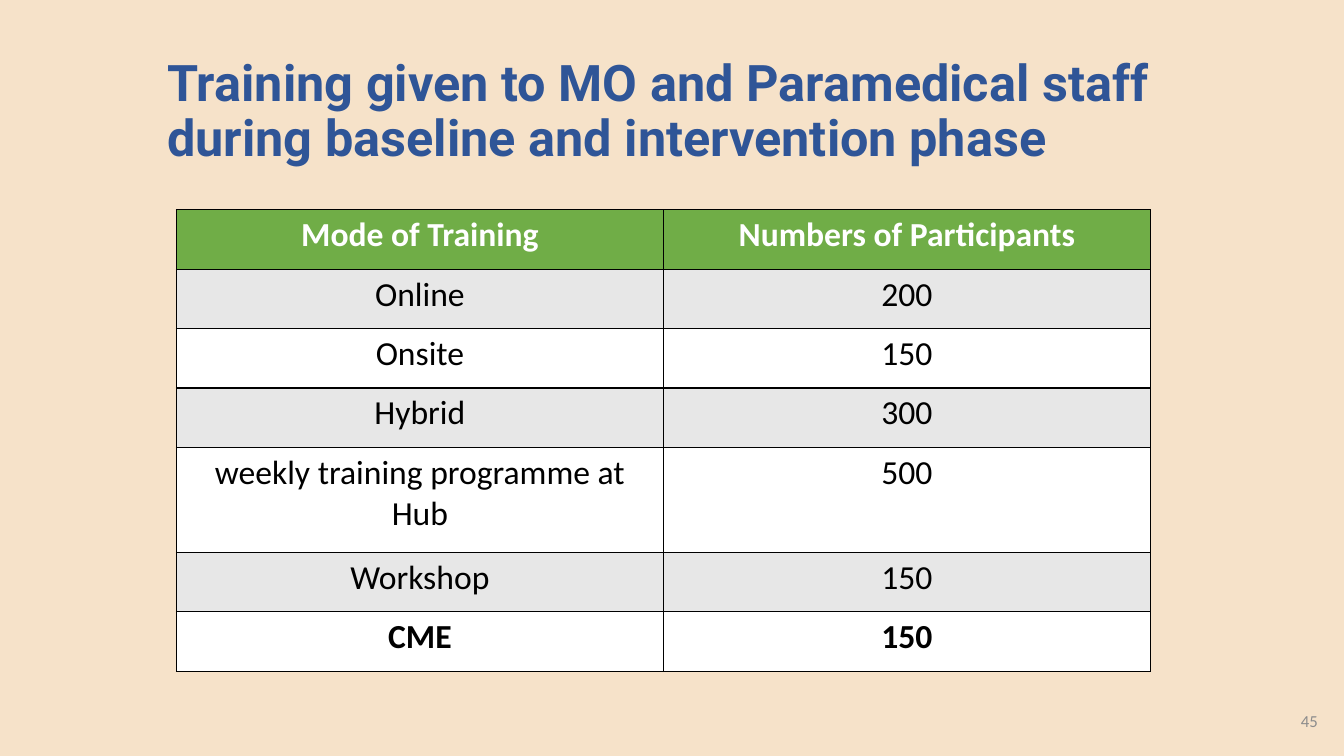
import pptx
import pptx.dml.color
import pptx.enum.text
import pptx.oxml
import pptx.oxml.ns
import pptx.util
from pptx.util import Inches

COLORS = {
    "background": "F6E2C9",
    "title": "2F5597",
    "header": "70AD47",
    "band": "E7E7E7",
    "white": "FFFFFF",
    "black": "000000",
    "page_number": "8C8C8C",
}
TRAININGS = [
    ("Mode of Training", "Numbers of Participants"),
    ("Online", "200"),
    ("Onsite", "150"),
    ("Hybrid", "300"),
    ("weekly training programme at Hub", "500"),
    ("Workshop", "150"),
    ("CME", "150"),
]
ROW_HEIGHT = 0.59
WRAPPED_ROW, WRAPPED_ROW_HEIGHT = 4, 1.04
COLUMN_WIDTH = 4.83

ALIGN = pptx.enum.text.PP_ALIGN
ANCHOR = pptx.enum.text.MSO_ANCHOR


def rgb(name):
    return pptx.dml.color.RGBColor.from_string(COLORS[name])


def write(frame, text, size, color, align, font="Calibri", bold=False):
    """Put one formatted run in the first paragraph of a text frame."""
    paragraph = frame.paragraphs[0]
    paragraph.alignment = align
    run = paragraph.add_run()
    run.text = text
    run.font.name = font
    run.font.size = pptx.util.Pt(size)
    run.font.bold = bold
    run.font.color.rgb = rgb(color)
    return paragraph


def add_title(slide, text):
    title = slide.shapes.title
    title.left, title.top = Inches(1.56), Inches(0.58)
    title.width, title.height = Inches(10.75), Inches(1.08)
    frame = title.text_frame
    frame.auto_size = pptx.enum.text.MSO_AUTO_SIZE.NONE
    frame.vertical_anchor = ANCHOR.MIDDLE
    paragraph = write(frame, text, 36, "title", ALIGN.LEFT, "Roboto", True)
    paragraph.line_spacing = 0.9


def add_borders(cell):
    """Draw a thin black line on all four sides of a cell."""
    properties = cell._tc.get_or_add_tcPr()
    for position, side in enumerate(("lnL", "lnR", "lnT", "lnB")):
        line = pptx.oxml.parse_xml(
            f'<a:{side} {pptx.oxml.ns.nsdecls("a")} w="{pptx.util.Pt(1)}">'
            f'<a:solidFill><a:srgbClr val="{COLORS["black"]}"/></a:solidFill>'
            f'</a:{side}>'
        )
        properties.insert(position, line)


def format_cell(cell, text, fill, color, bold):
    cell.margin_left = cell.margin_right = Inches(0.08)
    cell.margin_top = cell.margin_bottom = Inches(0.05)
    cell.vertical_anchor = ANCHOR.TOP
    cell.fill.solid()
    cell.fill.fore_color.rgb = rgb(fill)
    write(cell.text_frame, text, 24, color, ALIGN.CENTER, bold=bold)
    add_borders(cell)


def add_training_table(slide):
    row_count, column_count = len(TRAININGS), len(TRAININGS[0])
    table = slide.shapes.add_table(
        row_count, column_count, Inches(1.75), Inches(2.08),
        Inches(column_count * COLUMN_WIDTH), Inches(4.58),
    ).table
    for column in table.columns:
        column.width = Inches(COLUMN_WIDTH)
    for row, values in enumerate(TRAININGS):
        height = WRAPPED_ROW_HEIGHT if row == WRAPPED_ROW else ROW_HEIGHT
        table.rows[row].height = Inches(height)
        is_header = row == 0
        fill = "header" if is_header else "band" if row % 2 else "white"
        color = "white" if is_header else "black"
        bold = row in (0, row_count - 1)
        for column, text in enumerate(values):
            format_cell(table.cell(row, column), text, fill, color, bold)


def add_page_number(slide, number):
    box = slide.shapes.add_textbox(
        Inches(10.17), Inches(6.95), Inches(3), Inches(0.4))
    frame = box.text_frame
    frame.word_wrap = True
    frame.vertical_anchor = ANCHOR.MIDDLE
    write(frame, number, 12, "page_number", ALIGN.RIGHT)


def main():
    presentation = pptx.Presentation()
    presentation.slide_width = Inches(13.33)
    presentation.slide_height = Inches(7.5)
    slide = presentation.slides.add_slide(presentation.slide_layouts[5])
    slide.background.fill.solid()
    slide.background.fill.fore_color.rgb = rgb("background")
    add_title(slide, "Training given to MO and Paramedical staff "
                     "during baseline and intervention phase")
    add_training_table(slide)
    add_page_number(slide, "45")
    presentation.save("out.pptx")


if __name__ == "__main__":
    main()
